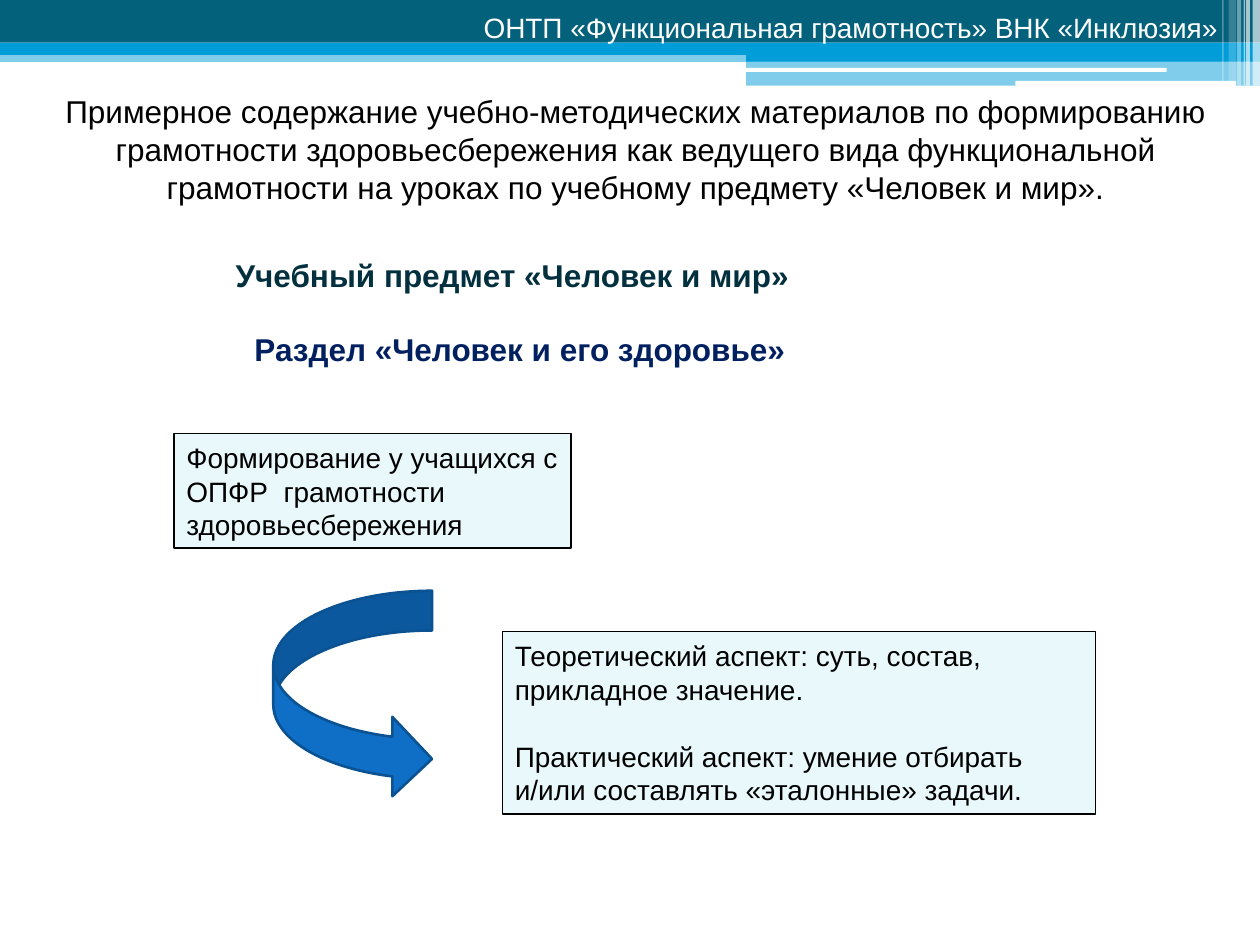
from lxml import etree
from pptx import Presentation
from pptx import util as u
from pptx.dml.color import RGBColor
from pptx.enum import shapes, text
from pptx.oxml.ns import qn

Cm, Pt = u.Cm, u.Pt
KIND = shapes.MSO_SHAPE
WIDE, DEEP, PALE, WHITE, BLACK = 25.4, "04617B", "E9F9FB", "FFFFFF", "000000"
BLUE = "009DD9"


def tint(part, code):
    """Set the colour of a font or a solid fill from a hex string."""
    if hasattr(part, "solid"):
        part.solid()
        part = part.fore_color
    else:
        part = part.color
    part.rgb = RGBColor.from_string(code)


def apply(item, style):
    for name, value in style.items():
        setattr(item, name, value)


class Page:
    """Holds the text style and the current slide."""

    font = {"name": "Arial", "size": Pt(16), "bold": False}

    def __init__(self, deck):
        self.slide = deck.slides.add_slide(deck.slide_layouts[6])

    def shape(self, box, fill, kind=KIND.RECTANGLE, alpha=100, line=None, width=0):
        item = self.slide.shapes.add_shape(kind, *map(Cm, box))
        item.shadow.inherit = False
        tint(item.fill, fill)
        if alpha < 100:
            node = item.element.spPr.find(qn("a:solidFill"))[0]
            etree.SubElement(node, qn("a:alpha"), val=str(alpha * 1000))
        if line:
            tint(item.line.fill, line)
            item.line.width = Pt(width)
        else:
            item.line.fill.background()
        return item

    def words(self, item, lines, color=BLACK, align=text.PP_ALIGN.LEFT,
              wrap=True, gap=0, **extra):
        frame = item.text_frame
        apply(frame, {"word_wrap": wrap,
                      "auto_size": text.MSO_AUTO_SIZE.SHAPE_TO_FIT_TEXT})
        for i, line in enumerate(lines):
            para = frame.paragraphs[0] if i == 0 else frame.add_paragraph()
            apply(para, {"alignment": align, "space_before": Pt(gap if i else 0)})
            run = para.add_run()
            run.text = line
            apply(run.font, {**self.font, **extra})
            tint(run.font, color)

    def label(self, box, line, **style):
        self.words(self.slide.shapes.add_textbox(*map(Cm, box)), [line], **style)

    def panel(self, box, *lines, **style):
        self.words(self.shape(box, PALE, line=BLACK), lines, **style)


def header(page):
    for box, fill, alpha in (
        ((0, 1.02, WIDE, 0.23), BLUE, 50),
        ((0, 0, WIDE, 0.86), DEEP, 100),
        ((0, 0.86, WIDE, 0.25), BLUE, 100),
        ((15.04, 0.99, 10.36, 0.25), BLUE, 100),
        ((15.04, 1.22, 10.36, 0.51), BLUE, 50),
    ):
        page.shape(box, fill, alpha=alpha)
    for box in ((15.01, 1.37, 8.51, 0.08), (20.47, 1.63, 4.45, 0.1)):
        page.shape(box, WHITE, KIND.ROUNDED_RECTANGLE)
    for left, width, high, alpha in (
        (25.25, 0.15, 1.73, 65), (25.12, 0.08, 1.73, 65), (25.07, 0.03, 1.73, 60),
        (24.94, 0.08, 1.73, 40), (24.77, 0.15, 1.63, 20), (24.64, 0.03, 1.63, 30),
    ):
        page.shape((left, 0, width, high), WHITE, alpha=alpha)
    page.label((9.5, 0.08, 15.67, 0.94),
               "ОНТП «Функциональная грамотность» ВНК «Инклюзия»",
               color=WHITE, wrap=False)


def main():
    deck = Presentation()
    apply(deck, {"slide_width": Cm(WIDE), "slide_height": Cm(19.05)})
    page = Page(deck)
    header(page)

    big = {"size": Pt(18)}
    page.label((0.71, 1.73, 24.21, 2.57),
               "Примерное содержание учебно-методических материалов по формированию "
               "грамотности здоровьесбережения как ведущего вида функциональной "
               "грамотности на уроках по учебному предмету «Человек и мир».",
               align=text.PP_ALIGN.CENTER, **big)
    page.panel((10.13, 12.73, 11.96, 3.68),
               "Теоретический аспект: суть, состав, прикладное значение.",
               "Практический аспект: умение отбирать и/или составлять "
               "«эталонные» задачи.", gap=19)
    page.label((4.5, 5.03, 11.79, 1.02), "Учебный предмет «Человек и мир»",
               color="02303E", wrap=False, bold=True, **big)
    page.label((4.88, 6.53, 11.4, 1.02), "Раздел «Человек и его здоровье»",
               color="002060", bold=True, **big)
    page.panel((3.51, 8.74, 8, 2.31),
               "Формирование у учащихся с ОПФР  грамотности здоровьесбережения")
    page.shape((5.51, 11.91, 3.2, 4.19), "0F6FC6", KIND.CURVED_RIGHT_ARROW,
               line="0B5292", width=1.5)
    deck.save("out.pptx")


if __name__ == "__main__":
    main()
